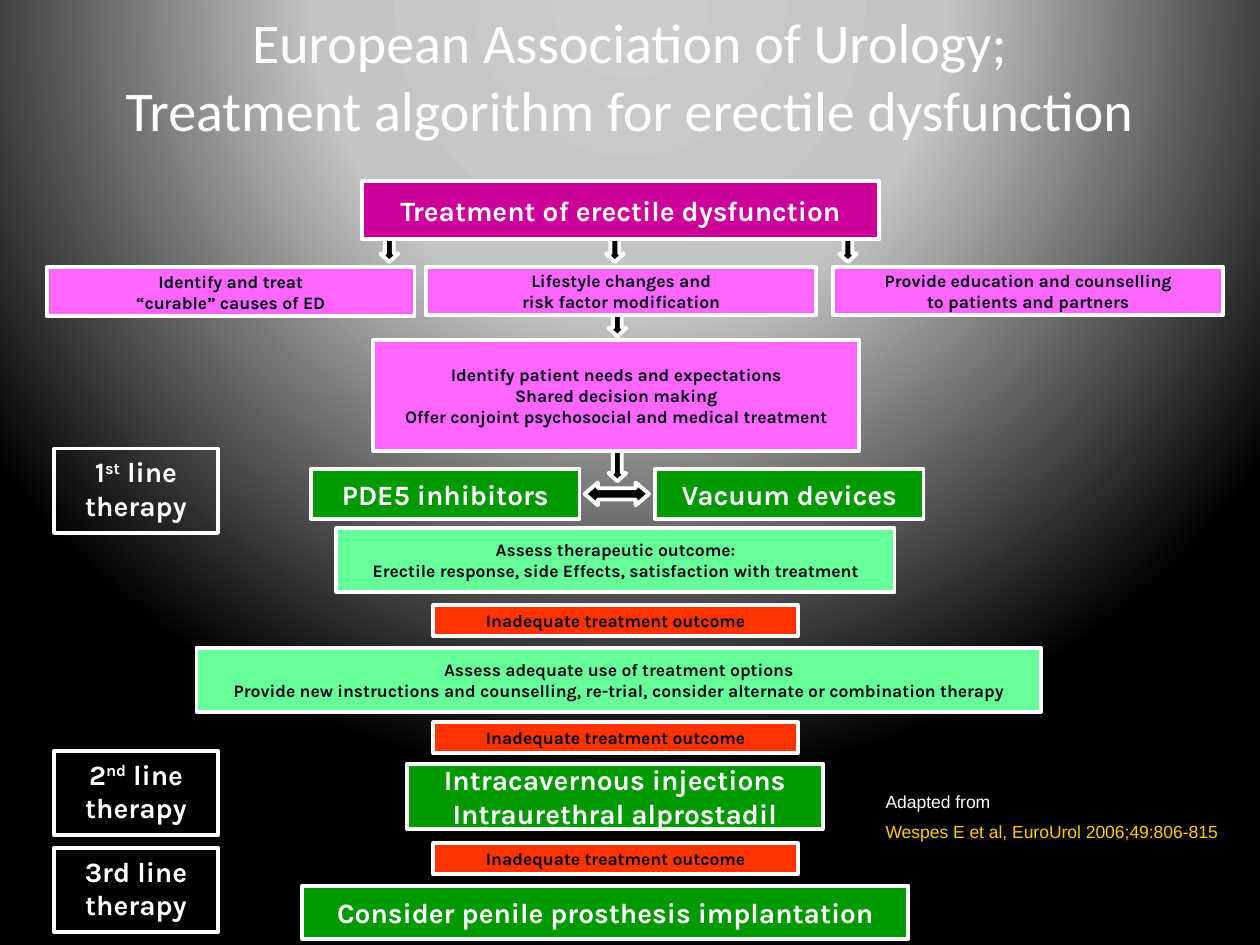
from pptx import Presentation
from pptx.dml.color import RGBColor
from pptx.enum.shapes import MSO_SHAPE
from pptx.enum.text import MSO_ANCHOR, PP_ALIGN
from pptx.oxml import parse_xml
from pptx.oxml.ns import nsdecls
from pptx.util import Inches, Pt

RECT, DOWN, BOTH_WAYS = MSO_SHAPE.RECTANGLE, MSO_SHAPE.DOWN_ARROW, MSO_SHAPE.LEFT_RIGHT_ARROW
TOP, MIDDLE = MSO_ANCHOR.TOP, MSO_ANCHOR.MIDDLE
LEFT, CENTER = PP_ALIGN.LEFT, PP_ALIGN.CENTER
WHITE, BLACK, INK, GOLD = "FFFFFF", "000000", "000514", "FFCC00"
MAGENTA, PINK, GREEN, MINT, RED = "CC0099", "FF66FF", "009900", "66FF99", "FF3300"

prs = Presentation()
prs.slide_width, prs.slide_height = Inches(10), Inches(7.5)
s = prs.slides.add_slide(prs.slide_layouts[6])
col, row = prs.slide_width / 100, prs.slide_height / 75


def add(kind, x, y, w, h, fill=None):
    """Add an outlined shape, or a text box if kind is None; x to h are in columns and rows."""
    place = [int(v) for v in (x * col, y * row, w * col, h * row)]
    if kind is None:
        return s.shapes.add_textbox(*place)
    sp = s.shapes.add_shape(kind, *place)
    sp.shadow.inherit = False
    if fill:
        sp.fill.solid()
        sp.fill.fore_color.rgb = RGBColor.from_string(fill)
    else:
        sp.fill.background()
    sp.line.color.rgb = RGBColor.from_string(WHITE)
    sp.line.width = Pt(2.25)
    return sp


def write(sp, text, size=16, colors=(WHITE,), font="Karla", bold=True,
          align=CENTER, anchor=MIDDLE, wrap=False, before=0):
    """Newlines part paragraphs, \\v breaks a line, ^ surrounds superscript; colors go by paragraph."""
    tf = sp.text_frame
    tf.word_wrap, tf.vertical_anchor = wrap, anchor
    for i, line in enumerate(text.split("\n")):
        p = tf.add_paragraph() if i else tf.paragraphs[0]
        p.alignment, p.space_before = align, Pt(before if i else 0)
        for j, part in enumerate(line.split("\v")):
            if j:
                p.add_line_break()
            for k, piece in enumerate(part.split("^")):
                r = p.add_run()
                r.text = piece
                r.font.size, r.font.name, r.font.bold = Pt(size), font, bold
                r.font.color.rgb = RGBColor.from_string(colors[i % len(colors)])
                if k % 2:
                    r.font._element.set("baseline", "30000")


# Background: glow from above the slide
stops = "".join(f'<a:gs pos="{pos}000"><a:srgbClr val="{c}"/></a:gs>'
                for pos, c in ((0, "CCCCCC"), (40, "C4C4C4"), (100, BLACK)))
s._element.cSld.insert(0, parse_xml(
    f'<p:bg {nsdecls("p", "a")}><p:bgPr><a:gradFill rotWithShape="1"><a:gsLst>{stops}</a:gsLst>'
    '<a:path path="circle"><a:fillToRect l="50000" t="-80000" r="50000" b="180000"/></a:path>'
    '</a:gradFill><a:effectLst/></p:bgPr></p:bg>'))

write(add(None, 5, -0.3, 90, 12.5),
      "European Association of Urology;\vTreatment algorithm for erectile dysfunction",
      size=32, font="Calibri", bold=False, wrap=True)

# Arrows lie behind the boxes
for x, y in ((30.2, 18.1), (48.1, 18.1), (66.6, 18.1), (48.3, 24), (48.3, 35.5)):
    sp = add(DOWN, x, y, 1.4, 2.7, BLACK)
    sp.adjustments[0], sp.adjustments[1] = 0.5, 0.47
sp = add(BOTH_WAYS, 46.4, 38.3, 5.1, 1.8, BLACK)
sp.adjustments[0], sp.adjustments[1] = 0.5, 0.58

# Main steps
for x, y, w, h, fill, text in (
    (28.7, 14.4, 41.1, 4.6, MAGENTA, "Treatment of erectile dysfunction"),
    (24.7, 37.2, 21.3, 4, GREEN, "PDE5 inhibitors"),
    (52, 37.2, 21.3, 4, GREEN, "Vacuum devices"),
    (32.3, 60.6, 33, 5.2, GREEN, "Intracavernous injections\nIntraurethral alprostadil"),
    (24, 70.3, 48.1, 4.2, GREEN, "Consider penile prosthesis implantation"),
):
    write(add(RECT, x, y, w, h, fill), text)

# Advice and assessment
for x, y, w, h, fill, text in (
    (3.7, 21.2, 29.2, 3.9, PINK, "Identify and treat\n“curable” causes of ED"),
    (33.8, 21.2, 31, 3.8, PINK, "Lifestyle changes and\nrisk factor modification"),
    (66.1, 21.2, 31, 3.8, PINK, "Provide education and counselling\nto patients and partners"),
    (29.6, 27, 38.6, 8.8, PINK, "Identify patient needs and expectations\nShared decision making\n"
     "Offer conjoint psychosocial and medical treatment"),
    (26.7, 41.9, 44.3, 5.1, MINT, "Assess therapeutic outcome:\n"
     "Erectile response, side Effects, satisfaction with treatment"),
    (15.6, 51.4, 67, 5.1, MINT, "Assess adequate use of treatment options\n"
     "Provide new instructions and counselling, re-trial, consider alternate or combination therapy"),
):
    write(add(RECT, x, y, w, h, fill), text, size=10, colors=(INK,))

for y in (48, 57.3, 66.9):
    write(add(RECT, 34.4, y, 28.9, 2.5, RED), "Inadequate treatment outcome", size=10, colors=(INK,))

# Lines of therapy
for y, rank in ((35.6, "1^st^"), (59.6, "2^nd^"), (67.3, "3rd")):
    write(add(RECT, 4.3, y, 13, 6.7), f"{rank} line therapy", anchor=TOP, wrap=True)

write(add(None, 69.3, 62.3, 29.5, 5.2), "Adapted from\nWespes E et al, EuroUrol 2006;49:806-815",
      size=10, colors=(WHITE, GOLD), font="Arial", bold=False, align=LEFT, anchor=TOP,
      wrap=True, before=5)

prs.save("out.pptx")
